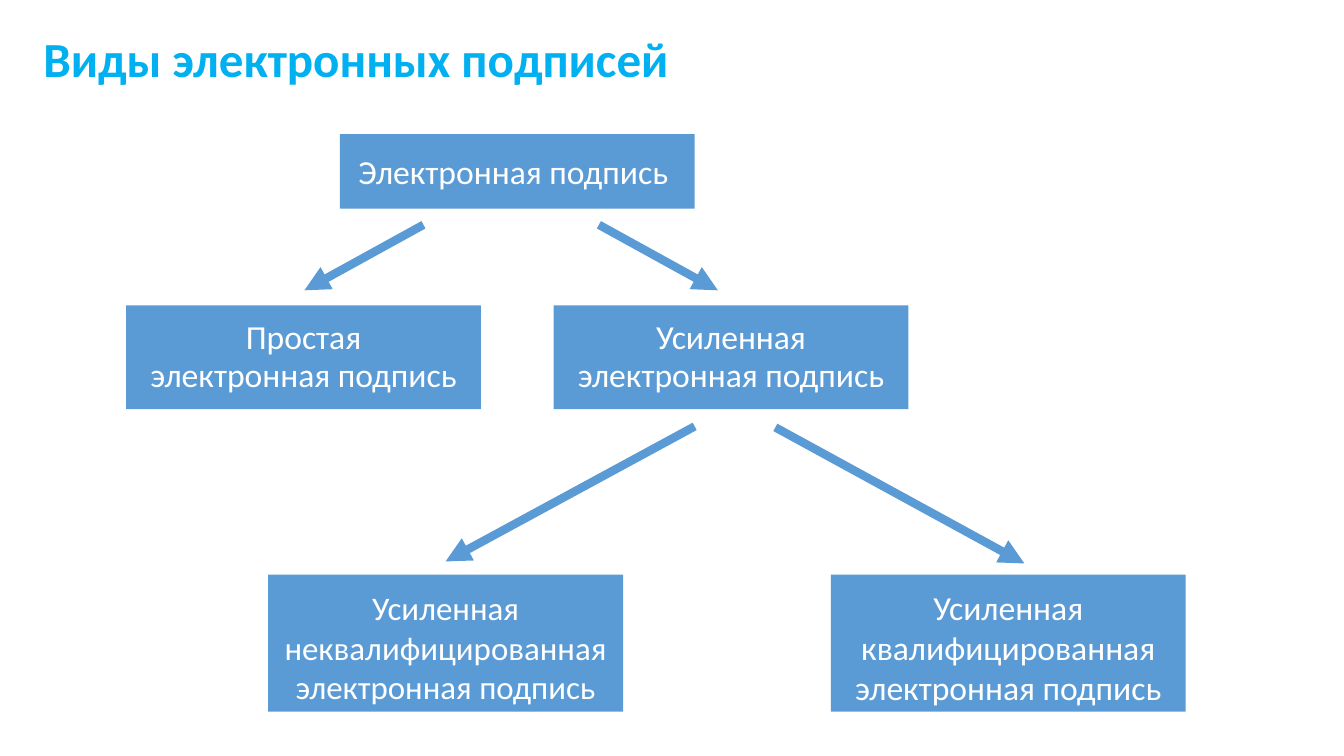
from lxml.etree import SubElement
from pptx import Presentation
from pptx.dml.color import RGBColor
from pptx.enum.shapes import MSO_CONNECTOR, MSO_SHAPE
from pptx.enum.text import MSO_ANCHOR, PP_ALIGN
from pptx.oxml.ns import qn
from pptx.util import Pt

PX = 9144  # EMU in one px, 100 px to the inch
BOX_WIDTH = 352


def px(*lengths):
    return [length * PX for length in lengths]


def color(hex_code):
    return RGBColor.from_string(hex_code)


def apply_format(target, values):
    for name, value in values.items():
        setattr(target, name, value)


class SignatureSlide:
    font = "Calibri"
    blue = "5B9BD5"
    title_color = "00B0F0"
    text_color = "FFFFFF"

    def __init__(self, deck):
        self.page = deck.slides.add_slide(deck.slide_layouts[5])

    def fill_text(self, shape, lines, size, hex_code, align, spacing, bold=False, margins=(10, 5, 10, 5)):
        frame = shape.text_frame
        left, top, right, bottom = px(*margins)
        apply_format(frame, {
            "text": "\n".join(lines), "word_wrap": True, "vertical_anchor": MSO_ANCHOR.MIDDLE,
            "margin_left": left, "margin_top": top, "margin_right": right, "margin_bottom": bottom,
        })
        for para in frame.paragraphs:
            apply_format(para, {"alignment": align, "line_spacing": spacing})
            for span in para.runs:
                apply_format(span.font, {"name": self.font, "size": Pt(size), "bold": bold})
                span.font.color.rgb = color(hex_code)

    def title(self, text, left, top, width, height):
        holder = self.page.shapes.title
        places = zip(("left", "top", "width", "height"), px(left, top, width, height))
        apply_format(holder, dict(places))
        self.fill_text(holder, [text], 35, self.title_color, PP_ALIGN.LEFT, 0.9, bold=True)

    def box(self, left, top, height, lines, size=24, spacing=1.0, margins=(10, 5, 10, 5)):
        box = self.page.shapes.add_shape(MSO_SHAPE.RECTANGLE, *px(left, top, BOX_WIDTH, height))
        box.shadow.inherit = False
        box.fill.solid()
        box.fill.fore_color.rgb = color(self.blue)
        box.line.fill.background()
        self.fill_text(box, lines, size, self.text_color, PP_ALIGN.CENTER, spacing, margins=margins)

    def arrow(self, *ends):
        arrow = self.page.shapes.add_connector(MSO_CONNECTOR.STRAIGHT, *px(*ends))
        arrow.line.color.rgb = color(self.blue)
        arrow.line.width = Pt(6)
        properties = arrow._element.spPr
        SubElement(properties.find(qn("a:ln")), qn("a:tailEnd"), type="triangle")
        SubElement(properties, qn("a:effectLst"))


def main():
    deck = Presentation()
    deck.slide_width, deck.slide_height = px(1333, 750)
    slide = SignatureSlide(deck)
    slide.title("Виды электронных подписей", 33, -11, 1150, 145)

    # Root of the tree
    slide.box(337, 133, 74, ["Электронная подпись"], margins=(5, 5, 13, 5))

    # Second level: simple and enhanced signatures
    for left, kind in ((125, "Простая"), (549, "Усиленная")):
        slide.box(left, 303, 103, [kind, "электронная подпись"], spacing=0.95)

    # Third level: kinds of enhanced signature
    for left, kind, size in ((266, "неквалифицированная", 23.5), (824, "квалифицированная", 24)):
        slide.box(left, 570, 136, [f"Усиленная {kind} электронная подпись"], size, margins=(10, 10, 10, 2))

    # Arrows from parent to child
    for ends in ((420, 223, 302, 288), (594, 223, 712, 288),
                 (689, 423, 442, 557), (769, 424, 1016, 559)):
        slide.arrow(*ends)

    deck.save("out.pptx")


if __name__ == "__main__":
    main()
